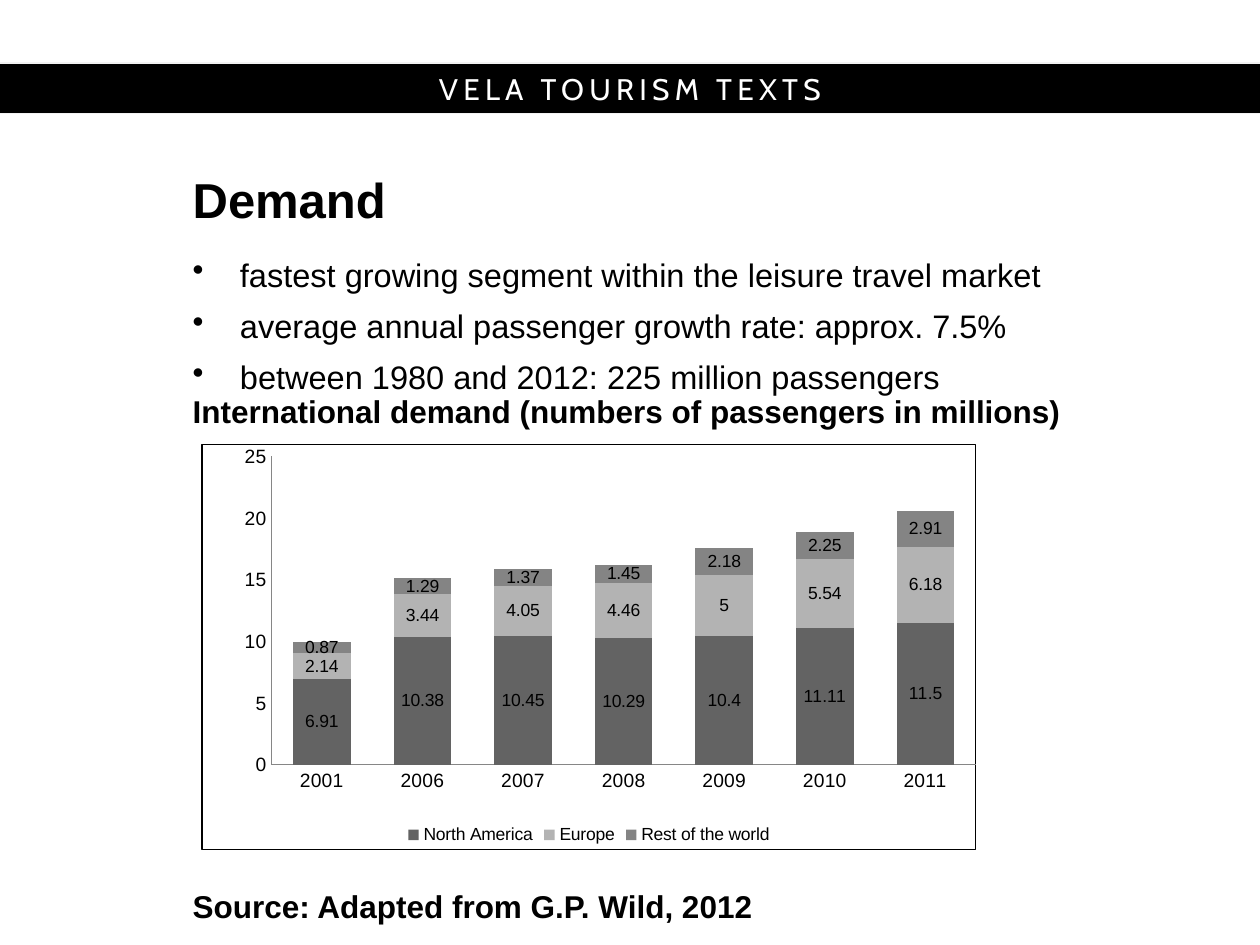
from dataclasses import dataclass

from lxml import etree
from pptx import Presentation
from pptx.chart.data import CategoryChartData
from pptx.dml.color import RGBColor
from pptx.enum import chart as ch, shapes, text
from pptx.oxml import parse_xml
from pptx.oxml.ns import nsdecls, qn
from pptx.util import Pt


@dataclass(frozen=True)
class Theme:
    ink: RGBColor = RGBColor(0, 0, 0)
    paper: RGBColor = RGBColor(255, 255, 255)
    edge: RGBColor = RGBColor(0xF2, 0xF2, 0xF2)
    axis: RGBColor = RGBColor(0x86, 0x86, 0x86)
    bars: tuple = tuple(RGBColor.from_string(c) for c in ("636363", "B3B3B3", "848484"))
    font: str = "Arial"
    brand: str = "Cabin"
    title: float = 28
    body: float = 18.6
    head: float = 18
    band: float = 17
    tick: float = 11
    label: float = 10


T = Theme()
YEARS = ["2001", "2006", "2007", "2008", "2009", "2010", "2011"]
DEMAND = {
    "North America": (6.91, 10.38, 10.45, 10.29, 10.4, 11.11, 11.5),
    "Europe": (2.14, 3.44, 4.05, 4.46, 5, 5.54, 6.18),
    "Rest of the world": (0.87, 1.29, 1.37, 1.45, 2.18, 2.25, 2.91),
}
POINTS = [
    "fastest growing segment within the leisure travel market",
    "average annual passenger growth rate: approx. 7.5%",
    "between 1980 and 2012: 225 million passengers",
]


def style(font, size, color=T.ink, name=T.font, bold=False):
    font.name, font.size, font.bold = name, Pt(size), bold
    font.color.rgb = color


def add_band(slide, box, words):
    band = slide.shapes.add_shape(shapes.MSO_SHAPE.RECTANGLE, *map(Pt, box))
    band.shadow.inherit = False
    band.fill.solid()
    band.fill.fore_color.rgb = T.ink
    band.line.color.rgb = T.edge
    band.line.width = Pt(0.75)
    frame = band.text_frame
    frame.vertical_anchor = text.MSO_ANCHOR.MIDDLE
    para = frame.paragraphs[0]
    para.alignment = text.PP_ALIGN.CENTER
    run = para.add_run()
    run.text = words
    style(run.font, T.band, T.paper, T.brand)
    run.font._element.set("spc", "300")


def add_text(slide, box, lines, size, bold=False):
    frame = slide.shapes.add_textbox(*map(Pt, box)).text_frame
    frame.word_wrap = True
    frame.text = "\n".join(lines)
    for para in frame.paragraphs:
        style(para.font, size, bold=bold)
    return frame


def add_title(slide, box, words):
    frame = add_text(slide, box, [words], T.title, True)
    frame.vertical_anchor = text.MSO_ANCHOR.MIDDLE
    frame.paragraphs[0].line_spacing = Pt(32)


def add_list(slide, box, lines):
    frame = add_text(slide, box, lines, T.body)
    for para in frame.paragraphs:
        props = para._p.get_or_add_pPr()
        props.set("marL", str(Pt(27)))
        props.set("indent", str(-Pt(27)))
        mark = parse_xml(f'<a:buChar {nsdecls("a")} char="•"/>')
        props.find(qn("a:defRPr")).addprevious(mark)
        para.space_after = Pt(7)


def set_plot(chart, **parts):
    """Fix the inner plot area, in fractions of the chart."""
    plot = chart._chartSpace.chart.plotArea
    for old in plot.findall(qn("c:layout")):
        plot.remove(old)
    layout = etree.Element(qn("c:layout"))
    manual = etree.SubElement(layout, qn("c:manualLayout"))
    values = dict(layoutTarget="inner", xMode="edge", yMode="edge", **parts)
    for tag, value in values.items():
        etree.SubElement(manual, qn(f"c:{tag}")).set("val", str(value))
    plot.insert(0, layout)


def set_border(chart):
    space = chart._chartSpace
    props = parse_xml(
        f'<c:spPr {nsdecls("c", "a")}><a:noFill/><a:ln w="{Pt(0.75)}"><a:solidFill>'
        f'<a:srgbClr val="{T.ink}"/></a:solidFill></a:ln></c:spPr>')
    space.chart.addnext(props)


def add_demand(slide, box):
    data = CategoryChartData()
    data.categories = YEARS
    for name, values in DEMAND.items():
        data.add_series(name, values)
    kind = ch.XL_CHART_TYPE.COLUMN_STACKED
    chart = slide.shapes.add_chart(kind, *map(Pt, box), data).chart
    style(chart.font, T.label)
    chart.has_title = False
    chart.has_legend = True
    chart.legend.position = ch.XL_LEGEND_POSITION.BOTTOM
    chart.legend.include_in_layout = False
    style(chart.legend.font, T.label)

    for axis in (chart.category_axis, chart.value_axis):
        axis.major_tick_mark = axis.minor_tick_mark = ch.XL_TICK_MARK.NONE
        axis.has_major_gridlines = False
        axis.format.line.color.rgb = T.axis
        style(axis.tick_labels.font, T.tick)
    scale = chart.value_axis
    scale.minimum_scale, scale.maximum_scale, scale.major_unit = 0, 25, 5

    plot = chart.plots[0]
    plot.gap_width, plot.overlap, plot.vary_by_categories = 75, 100, False
    for series, color in zip(plot.series, T.bars):
        series.format.fill.solid()
        series.format.fill.fore_color.rgb = color
        labels = series.data_labels
        labels.show_value = True
        style(labels.font, T.label)
    set_plot(chart, x=0.09, y=0.03, w=0.91, h=0.76)
    set_border(chart)


def main():
    deck = Presentation()
    deck.slide_width, deck.slide_height = Pt(720), Pt(540)
    slide = deck.slides.add_slide(deck.slide_layouts[6])
    left = 103
    add_band(slide, (-6, 36, 732, 29), "VELA TOURISM TEXTS")
    add_title(slide, (left, 97, 567, 35), "Demand")
    add_list(slide, (left, 142, 567, 76), POINTS)
    add_text(slide, (left, 220.5, 544, 29),
             ["International demand (numbers of passengers in millions)"], T.head, True)
    add_demand(slide, (115, 253.5, 443, 232.5))
    add_text(slide, (left, 503.5, 544, 29),
             ["Source: Adapted from G.P. Wild, 2012"], T.head, True)
    deck.save("out.pptx")


if __name__ == "__main__":
    main()
